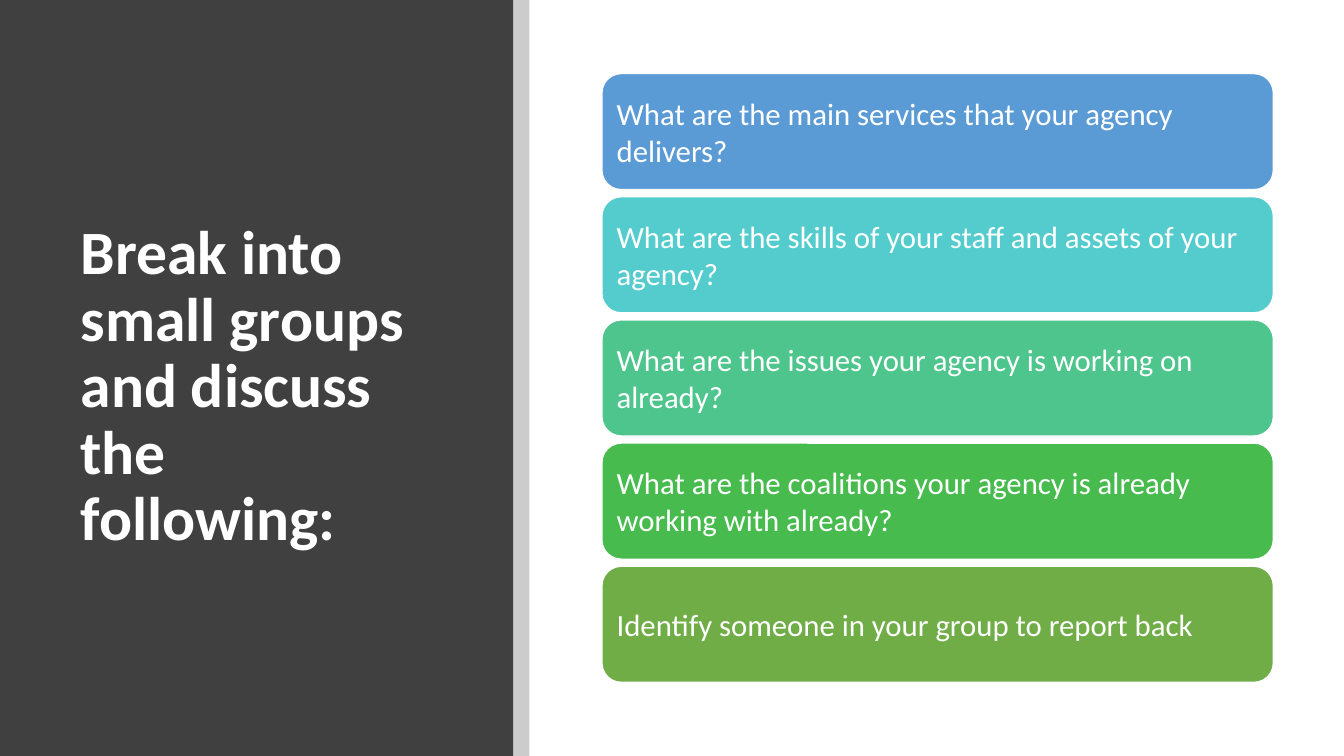
from lxml.etree import SubElement
from pptx import Presentation
from pptx.dml.color import RGBColor
from pptx.enum.shapes import MSO_SHAPE
from pptx.enum.text import MSO_ANCHOR, MSO_AUTO_SIZE, PP_ALIGN
from pptx.oxml.ns import qn
from pptx.util import Inches, Pt

WIDTH, HEIGHT = 13.33, 7.5
FONT = "Calibri"
WHITE = RGBColor(0xFF, 0xFF, 0xFF)
BLACK = RGBColor(0x00, 0x00, 0x00)
CHARCOAL = RGBColor(0x40, 0x40, 0x40)
BLUE = RGBColor(0x5B, 0x9B, 0xD5)
TURQUOISE = RGBColor(0x54, 0xCC, 0xCD)
MINT = RGBColor(0x4D, 0xC5, 0x8D)
GREEN = RGBColor(0x48, 0xBB, 0x4F)
OLIVE = RGBColor(0x70, 0xAD, 0x47)

TITLE = "Break into small groups and discuss the following:"
QUESTIONS = [
    ("What are the main services that your agency delivers?", BLUE),
    ("What are the skills of your staff and assets of your agency?", TURQUOISE),
    ("What are the issues your agency is working on already?", MINT),
    ("What are the coalitions your agency is already working with already?", GREEN),
    ("Identify someone in your group to report back", OLIVE),
]


def add_block(s, kind, box, color):
    sp = s.shapes.add_shape(kind, *map(Inches, box))
    sp.shadow.inherit = False
    sp.fill.solid()
    sp.fill.fore_color.rgb = color
    sp.line.fill.background()
    return sp


def write_text(sp, text, size, bold=False):
    tf = sp.text_frame
    tf.text = text
    tf.word_wrap = True
    tf.auto_size = MSO_AUTO_SIZE.NONE
    tf.vertical_anchor = MSO_ANCHOR.MIDDLE
    p = tf.paragraphs[0]
    p.alignment = PP_ALIGN.LEFT
    font = p.runs[0].font
    font.name, font.size, font.bold = FONT, Pt(size), bold
    font.color.rgb = WHITE
    return tf


def title_panel(s, left, top, width, height):
    title = s.shapes.title
    panel = add_block(s, MSO_SHAPE.RECTANGLE, (left, top, width, height), CHARCOAL)
    title.element.addprevious(panel.element)
    title.left, title.top = Inches(left + 0.7), Inches(top + 0.89)
    title.width, title.height = Inches(width - 1.44), Inches(height - 1.59)
    tf = write_text(title, TITLE, 44, bold=True)
    tf.paragraphs[0].line_spacing = 0.9


def divider(s, left, top, width, height):
    sp = add_block(s, MSO_SHAPE.RECTANGLE, (left, top, width, height), BLACK)
    color = sp.element.spPr.find(qn("a:solidFill"))[0]
    SubElement(color, qn("a:alpha"), val="20000")


def question_cards(s, left, top, width, height, gap=0.07):
    card_height = (height - gap * (len(QUESTIONS) - 1)) / len(QUESTIONS)
    for row, (question, color) in enumerate(QUESTIONS):
        y = top + row * (card_height + gap)
        card = add_block(s, MSO_SHAPE.ROUNDED_RECTANGLE, (left, y, width, card_height), color)
        card.line.color.rgb = WHITE
        card.line.width = Pt(1)
        tf = write_text(card, question, 22)
        tf.margin_left = tf.margin_right = Inches(0.09)
        tf.margin_top = tf.margin_bottom = Inches(0.09)


def main():
    prs = Presentation()
    prs.slide_width, prs.slide_height = Inches(WIDTH), Inches(HEIGHT)
    s = prs.slides.add_slide(prs.slide_layouts[5])
    title_panel(s, 0, 0, 5.09, HEIGHT)
    divider(s, 5.09, 0, 0.16, HEIGHT)
    question_cards(s, 5.97, 0.73, 6.66, 6.04)
    prs.save("out.pptx")


if __name__ == "__main__":
    main()
